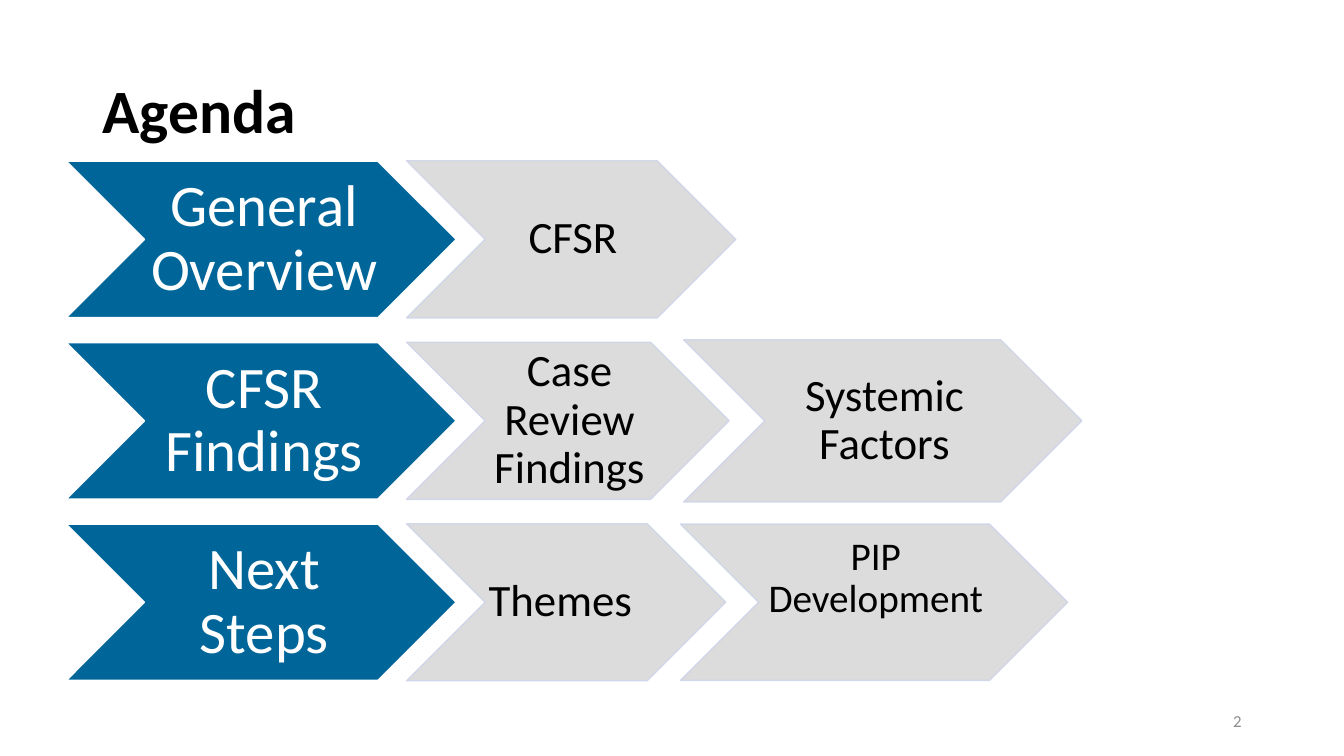
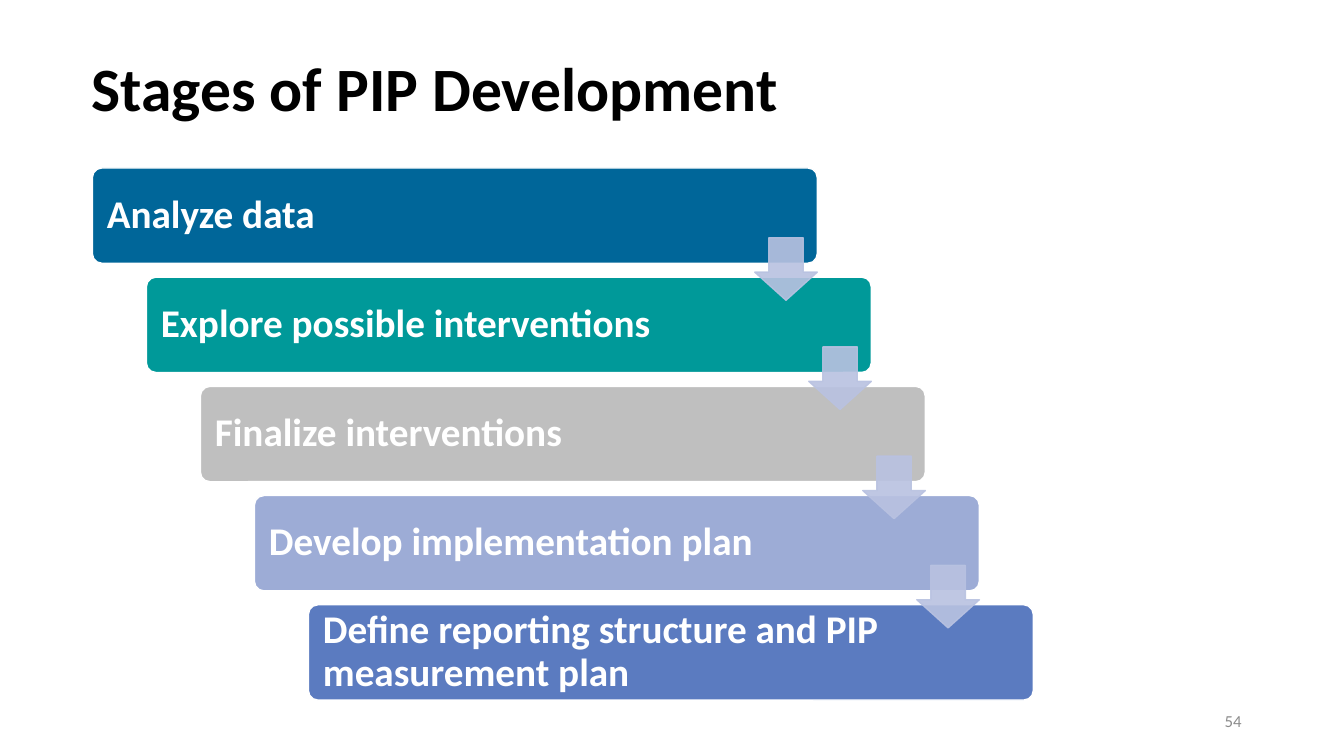
from lxml import etree
from pptx import Presentation
from pptx.dml.color import RGBColor
from pptx.enum.shapes import MSO_SHAPE
from pptx.enum.text import MSO_ANCHOR, MSO_AUTO_SIZE, PP_ALIGN
from pptx.oxml.ns import qn
from pptx.util import Inches, Pt

CHEVRON = MSO_SHAPE.CHEVRON
ROUNDED = MSO_SHAPE.ROUNDED_RECTANGLE
DOWN_ARROW = MSO_SHAPE.DOWN_ARROW
LEFT, CENTER, RIGHT = PP_ALIGN.LEFT, PP_ALIGN.CENTER, PP_ALIGN.RIGHT
MIDDLE = MSO_ANCHOR.MIDDLE
NO_FIT = MSO_AUTO_SIZE.NONE

COLORS = {
    "black": "000000",
    "white": "FFFFFF",
    "blue": "006699",
    "teal": "009999",
    "gray": "BFBFBF",
    "lavender": "9DACD6",
    "indigo": "5B7BC0",
    "arrow": "B9C2E1",
    "pale": "D9D9D9",
    "pale edge": "CFD5EA",
    "page number": "8C8C8C",
}
GRID_COLUMNS, GRID_ROWS = 160, 90
TITLE_ONLY = 5


class Deck:
    font = "Calibri"

    def __init__(self):
        self.prs = Presentation()
        self.prs.slide_width = Inches(13.33)
        self.prs.slide_height = Inches(7.5)
        self.slide = None

    def box(self, column, row, columns, rows):
        across = self.prs.slide_width / GRID_COLUMNS
        down = self.prs.slide_height / GRID_ROWS
        return (round(column * across), round(row * down),
                round(columns * across), round(rows * down))

    def add_text(self, frame, text, size, color, align=LEFT, bold=False,
                 pad=(7.2, 3.6, 7.2, 3.6), spacing=0.9):
        frame.word_wrap = True
        frame.auto_size = NO_FIT
        frame.vertical_anchor = MIDDLE
        (frame.margin_left, frame.margin_top,
         frame.margin_right, frame.margin_bottom) = map(Pt, pad)
        paragraph = frame.paragraphs[0]
        paragraph.alignment = align
        paragraph.line_spacing = spacing
        run = paragraph.add_run()
        run.text = text
        run.font.name = self.font
        run.font.size = Pt(size)
        run.font.bold = bold
        run.font.color.rgb = RGBColor.from_string(COLORS[color])

    def start(self, title, title_box, number):
        layout = self.prs.slide_layouts[TITLE_ONLY]
        self.slide = self.prs.slides.add_slide(layout)
        heading = self.slide.shapes.title
        heading.left, heading.top, heading.width, heading.height = self.box(*title_box)
        self.add_text(heading.text_frame, title, 44, "black", bold=True)
        footer = self.slide.shapes.add_textbox(*self.box(113, 83.4, 36, 4.8))
        self.add_text(footer.text_frame, str(number), 12, "page number", RIGHT, spacing=1)

    def shape(self, kind, box, fill, line, adjust=(), opacity=100):
        shape = self.slide.shapes.add_shape(kind, *self.box(*box))
        shape.shadow.inherit = False
        for index, value in enumerate(adjust):
            shape.adjustments[index] = value
        shape.fill.solid()
        shape.fill.fore_color.rgb = RGBColor.from_string(COLORS[fill])
        shape.line.width = Pt(1)
        shape.line.color.rgb = RGBColor.from_string(COLORS[line])
        if opacity < 100:
            for color in shape.element.spPr.iter(qn("a:srgbClr")):
                alpha = etree.SubElement(color, qn("a:alpha"))
                alpha.set("val", str(opacity * 1000))
        return shape

    def topic(self, text, column, middle, columns, rows):
        chevron = self.shape(CHEVRON, (column, middle - rows / 2, columns, rows),
                             "blue", "white")
        self.add_text(chevron.text_frame, text, 42, "white", CENTER, pad=(4.2, 2, 0, 2))

    def detail(self, text, column, middle, columns, rows,
               size=32, align=CENTER, pad=(2.5, 1.3, 0, 1.3)):
        chevron = self.shape(CHEVRON, (column, middle - rows / 2, columns, rows),
                             "pale", "pale edge", opacity=90)
        self.add_text(chevron.text_frame, text, size, "black", align, pad=pad)

    def stage(self, text, fill, box):
        bar = self.shape(ROUNDED, box, fill, "white", (0.1,))
        self.add_text(bar.text_frame, text, 28, "white", bold=True,
                      pad=(8.4, 8.4, 91, 8.4))

    def step_down(self, column, row, size):
        self.shape(DOWN_ARROW, (column, row, size, size), "arrow", "arrow",
                   (0.55, 0.45), 90)


def agenda(deck):
    deck.start("Agenda", (11, 4.8, 138, 17.4), 2)
    first, second = 7.9, 48.4
    middles = [28.5 + 21.6 * i for i in range(3)]
    topics = ("General Overview", "CFSR Findings", "Next Steps")
    for topic, middle in zip(topics, middles):
        deck.topic(topic, first, middle, 46.4, 18.6)
    overview, findings, steps = middles
    deck.detail("CFSR", second, overview, 39.2, 18.7)
    deck.detail("Case Review Findings", second, findings, 38.4, 18.7)
    deck.detail("Systemic Factors", 81.4, findings, 47.4, 19.3)
    deck.detail("Themes", second, steps, 38, 18.7, align=LEFT)
    deck.detail("PIP Development", 81, steps, 46.1, 18.6, size=28,
                pad=(2.5, 1.3, 0, 35))


def stages(deck):
    deck.start("Stages of PIP Development", (9.7, 4.8, 138, 12.1), 54)
    plan = (
        ("Analyze data", "blue"),
        ("Explore possible interventions", "teal"),
        ("Finalize interventions", "gray"),
        ("Develop implementation plan", "lavender"),
        ("Define reporting structure and PIP measurement plan", "indigo"),
    )
    left, top, width, height = 11, 20, 86.3, 11.35
    indent, drop, arrow = 6.43, 13, 7.45
    for i, (text, fill) in enumerate(plan):
        deck.stage(text, fill, (left + i * indent, top + i * drop, width, height))
    for i in range(len(plan) - 1):
        deck.step_down(left + i * indent + width - arrow, top + 8.3 + i * drop, arrow)


def main():
    deck = Deck()
    agenda(deck)
    stages(deck)
    deck.prs.save("out.pptx")


if __name__ == "__main__":
    main()
